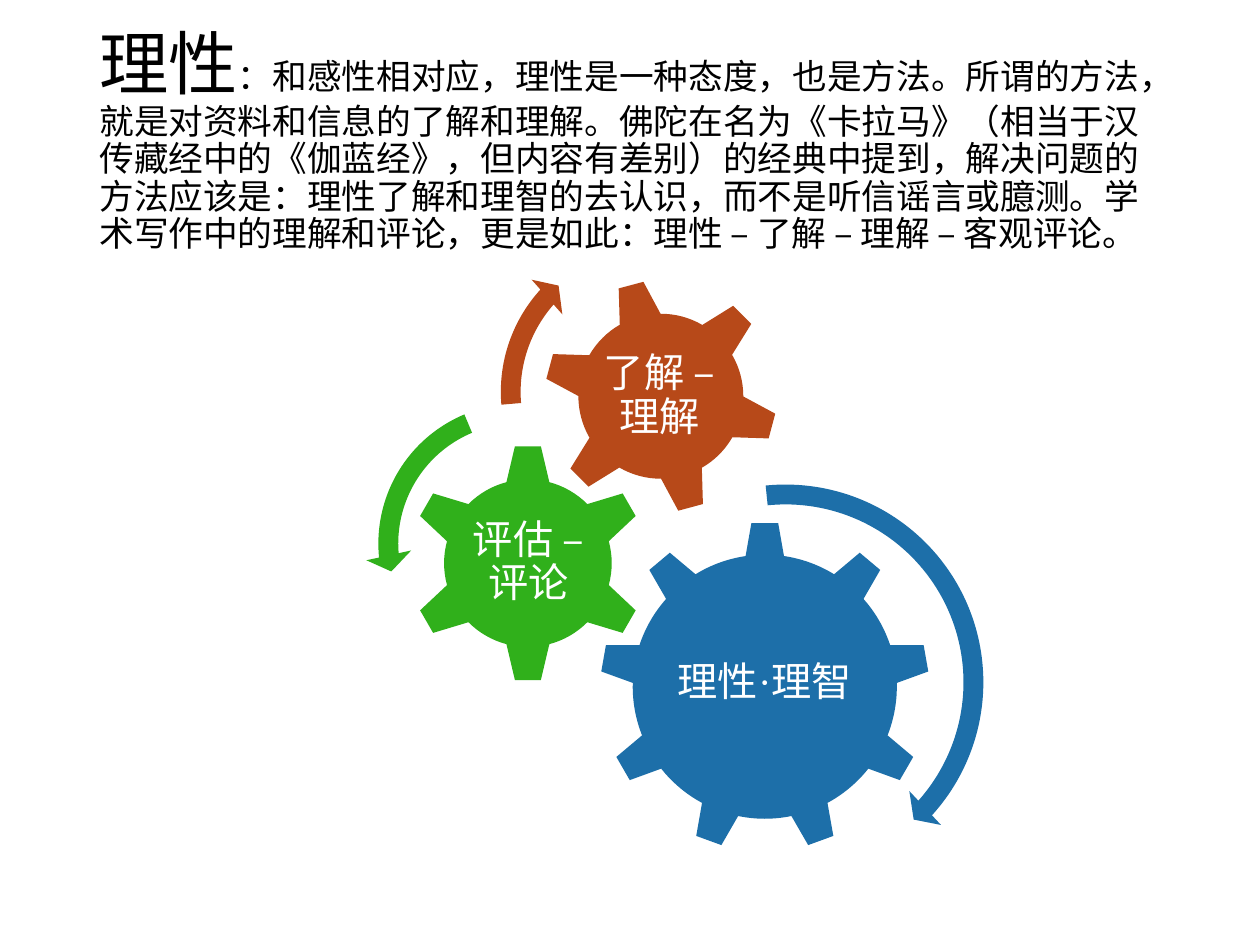
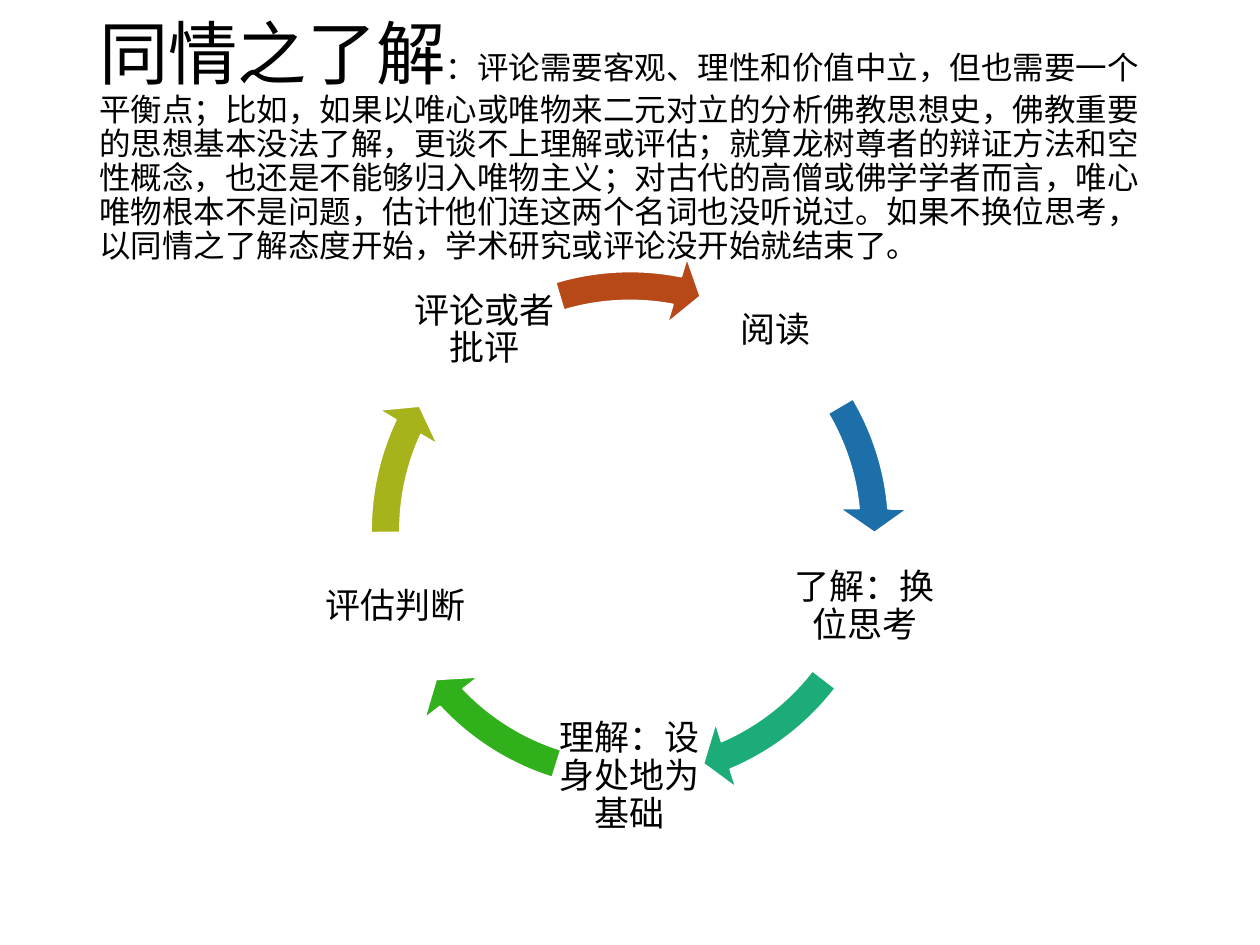
import math
from pptx import Presentation
from pptx import util as u
from pptx.dml.color import RGBColor
from pptx.enum import lang, shapes, text

INK = {
    "black": "000000", "white": "FFFFFF", "blue": "1D6FA9", "green": "30B01B",
    "rust": "B74919", "teal": "1CAC78", "olive": "A7B31A",
}
FONT = "Times New Roman"
KIND = shapes.MSO_SHAPE
HEAD = 39.6  # size of the lead words in a title


def rgb(name):
    return RGBColor.from_string(INK[name])


def add_text(slide, box, runs, ink="black", inset=0.03, align=text.PP_ALIGN.CENTER):
    """Put one paragraph of (words, size) runs in a box, centred in height."""
    frame = slide.shapes.add_textbox(*map(u.Inches, box)).text_frame
    frame.word_wrap = True
    frame.vertical_anchor = text.MSO_ANCHOR.MIDDLE
    frame.margin_left = frame.margin_right = u.Inches(inset)
    frame.margin_top = frame.margin_bottom = u.Inches(min(inset, 0.05))
    par = frame.paragraphs[0]
    par.alignment = align
    par.line_spacing = 0.9
    for words, size in runs:
        run = par.add_run()
        run.text = words
        run.font.size = u.Pt(size)
        run.font.name = FONT
        run.font.color.rgb = rgb(ink)
        run.font.language_id = lang.MSO_LANGUAGE_ID.SIMPLIFIED_CHINESE


def add_title(slide, lead, body, size):
    add_text(slide, (0.69, 0.4, 8.62, 1.45), [(lead, HEAD), (body, size)],
             inset=0.1, align=text.PP_ALIGN.LEFT)


def add_form(slide, kind, left, top, side, ink, edge=None):
    """Add a square preset shape in a flat colour."""
    form = slide.shapes.add_shape(kind, *map(u.Inches, (left, top, side, side)))
    form.shadow.inherit = False
    form.fill.solid()
    form.fill.fore_color.rgb = rgb(ink)
    if edge:
        form.line.color.rgb = rgb(edge)
        form.line.width = u.Pt(1)
    else:
        form.line.fill.background()
    return form


def add_gear(slide, kind, spot, ink, words, box, turn=0):
    add_form(slide, kind, *spot, ink).rotation = turn
    add_text(slide, box, [(words, 23)], "white")


def add_arc(slide, kind, spot, ink, band, tip, angles, edge=None):
    """Add a round arrow: band and tip in percent, angles (head, end, start) in degrees."""
    arc = add_form(slide, kind, *spot, ink, edge)
    values = [band / 100, *(deg * 0.6 for deg in angles), tip / 100]
    for i, value in enumerate(values):
        arc.adjustments[i] = value


def draw_gears(slide):
    add_title(slide, "理性",
              "：和感性相对应，理性是一种态度，也是方法。所谓的方法，就是对资料和信息的了解和理解。"
              "佛陀在名为《卡拉马》（相当于汉传藏经中的《伽蓝经》，但内容有差别）的经典中提到，"
              "解决问题的方法应该是：理性了解和理智的去认识，而不是听信谣言或臆测。"
              "学术写作中的理解和评论，更是如此：理性 – 了解 – 理解 – 客观评论。", 19.8)
    # Gears
    add_gear(slide, KIND.GEAR_9, (4.76, 4.14, 2.62), "blue",
             "理性·理智", (5.29, 4.75, 1.56, 1.35))
    add_gear(slide, KIND.GEAR_6, (3.24, 3.52, 1.9), "green",
             "评估 – 评论", (3.72, 4, 0.95, 0.94))
    add_gear(slide, KIND.GEAR_6, (4.31, 2.21, 1.87), "rust",
             "了解 – 理解", (4.71, 2.62, 1.05, 1.05), 345)
    # Turning arrows
    right, left = KIND.CIRCULAR_ARROW, KIND.LEFT_CIRCULAR_ARROW
    add_arc(slide, right, (4.56, 3.74, 3.35), "blue", 4.7, 5.5, (4.98, 42, 264.22))
    add_arc(slide, left, (2.9, 3.1, 2.43), "green", 6.5, 7.5, (7.17, 174.82, 247.3))
    add_arc(slide, right, (3.87, 1.8, 2.62), "rust", 6, 7, (6.57, 221.9, 175.14))


def draw_cycle(slide):
    add_title(slide, "同情之了解",
              "：评论需要客观、理性和价值中立，但也需要一个平衡点；比如，如果以唯心或唯物来二元对立的"
              "分析佛教思想史，佛教重要的思想基本没法了解，更谈不上理解或评估；就算龙树尊者的辩证方法和"
              "空性概念，也还是不能够归入唯物主义；对古代的高僧或佛学学者而言，唯心唯物根本不是问题，"
              "估计他们连这两个名词也没听说过。如果不换位思考，以同情之了解态度开始，"
              "学术研究或评论没开始就结束了。", 18)
    # Steps: label, colour, end and start angle of the arrow that follows
    steps = [
        ("阅读", "blue", 354.9, 329.43),
        ("了解：换位思考", "teal", 66.92, 37.55),
        ("理解：设身处地为基础", "green", 136.86, 107.48),
        ("评估判断", "olive", 204.98, 179.51),
        ("评论或者批评", "rust", 281.11, 253.3),
    ]
    mid_x, mid_y, reach, side, ring = 5, 4.21, 1.96, 1.18, 4.42
    for i, (words, ink, end, start) in enumerate(steps):
        turn = math.radians(-54 + i * 360 / len(steps))
        left = mid_x + reach * math.cos(turn) - side / 2
        top = mid_y + reach * math.sin(turn) - side / 2
        add_text(slide, (left, top, side, side), [(words, 20)])
        add_arc(slide, KIND.CIRCULAR_ARROW, (mid_x - ring / 2, mid_y - ring / 2, ring),
                ink, 5.2, 6.1, (5.6, end, start), "white")


def main():
    deck = Presentation()
    deck.slide_width, deck.slide_height = u.Inches(10), u.Inches(7.5)
    for draw in (draw_gears, draw_cycle):
        draw(deck.slides.add_slide(deck.slide_layouts[6]))
    deck.save("out.pptx")


if __name__ == "__main__":
    main()
